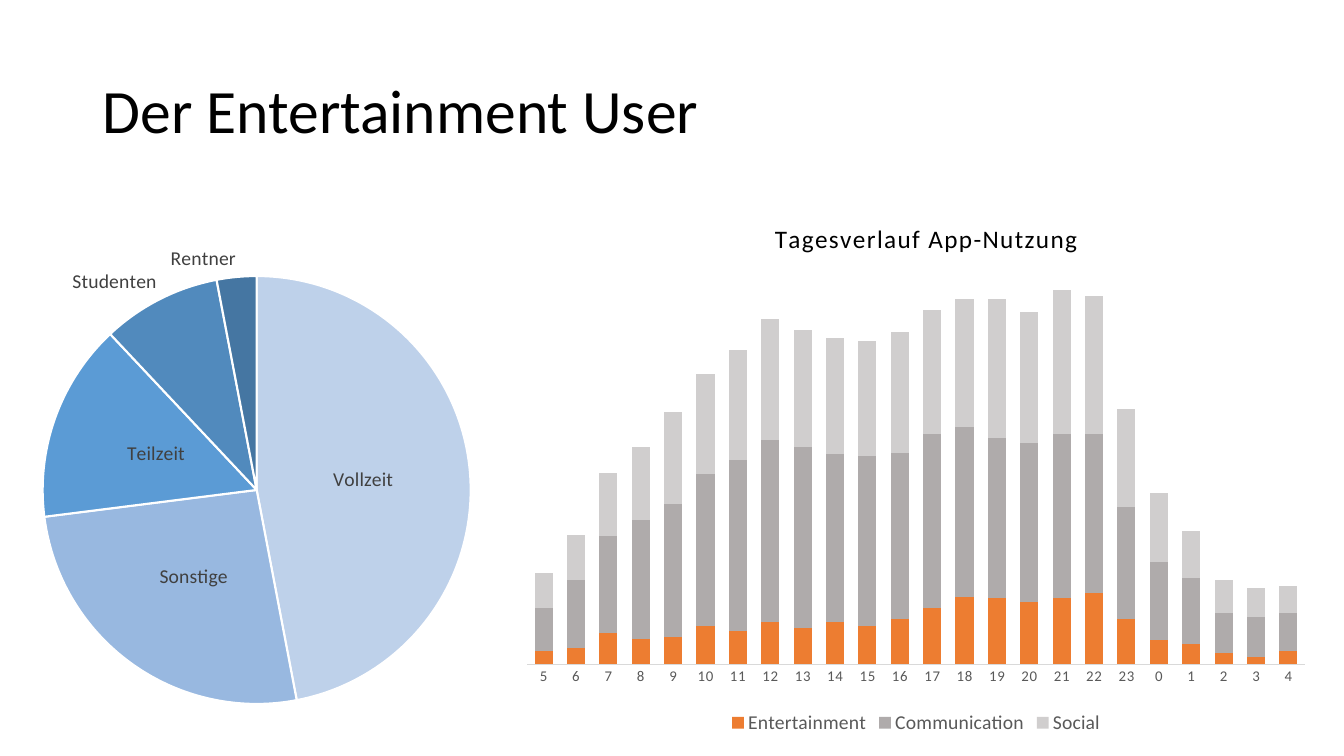
"""Build the slide on the entertainment user: job pie and daily app usage."""
import pptx
import pptx.chart.data
import pptx.dml.color
import pptx.enum.chart
import pptx.enum.text
import pptx.oxml
import pptx.oxml.ns
import pptx.util

THEME = {
    "font": "Calibri", "ink": "000000", "label": "404040", "axis": "595959",
    "line": "D9D9D9", "gap": "FFFFFF",
    "title": 44, "heading": 18, "text": 14, "tick": 10.6,
}
JOBS = [
    ("Vollzeit", 47, "BED1EA", "CENTER"),
    ("Sonstige", 26, "98B8E0", "CENTER"),
    ("Teilzeit", 15, "5B9BD5", "CENTER"),
    ("Studenten", 9, "518ABD", "OUTSIDE_END"),
    ("Rentner", 3, "4576A2", "OUTSIDE_END"),
]
USAGE = [
    ("Entertainment", "ED7D31", [7, 9, 17, 14, 15, 21, 18, 23, 20, 23, 21, 25,
                                 31, 37, 36, 34, 36, 39, 25, 13, 11, 6, 4, 7]),
    ("Communication", "AFABAB", [24, 37, 53, 65, 73, 83, 94, 100, 99, 92, 93, 91,
                                 95, 93, 88, 87, 90, 87, 61, 43, 36, 22, 22, 21]),
    ("Social", "D0CECE", [19, 25, 35, 40, 50, 55, 60, 66, 64, 64, 63, 66,
                          68, 70, 76, 72, 79, 76, 54, 38, 26, 18, 16, 15]),
]
HOURS = [str(hour % 24) for hour in range(5, 29)]


def style(font, size, color):
    """Give a font the theme's face, size and colour."""
    font.name = THEME["font"]
    font.size = pptx.util.Pt(THEME[size])
    font.bold = False
    font.color.rgb = pptx.dml.color.RGBColor.from_string(THEME[color])


def place(parent, index, **shares):
    """Place a chart part by shares of the chart's size."""
    for old in parent.xpath("./c:layout"):
        parent.remove(old)
    target = '<c:layoutTarget val="inner"/>' if "w" in shares else ""
    modes = "".join(f'<c:{key}Mode val="edge"/>' for key in "xy")
    values = "".join(f'<c:{key} val="{share}"/>' for key, share in shares.items())
    parent.insert(index, pptx.oxml.parse_xml(
        f'<c:layout {pptx.oxml.ns.nsdecls("c")}><c:manualLayout>'
        f"{target}{modes}{values}</c:manualLayout></c:layout>"))


deck = pptx.Presentation()
deck.slide_width = pptx.util.Inches(13.33)
deck.slide_height = pptx.util.Inches(7.5)
page = deck.slides.add_slide(deck.slide_layouts[6])
inch = pptx.util.Inches
rgb = pptx.dml.color.RGBColor.from_string
kinds = pptx.enum.chart.XL_CHART_TYPE

box = page.shapes.add_textbox(inch(0.92), inch(0.4), inch(11.5), inch(1.45))
box.text_frame.word_wrap = True
box.text_frame.vertical_anchor = pptx.enum.text.MSO_ANCHOR.MIDDLE
para = box.text_frame.paragraphs[0]
para.line_spacing = 0.9
span = para.add_run()
span.text = "Der Entertainment User"
style(span.font, "title", "ink")

job_data = pptx.chart.data.CategoryChartData()
job_data.categories = [job[0] for job in JOBS]
job_data.add_series("Series 1", [job[1] for job in JOBS])
pie = page.shapes.add_chart(
    kinds.PIE, inch(-0.82), inch(2.3), inch(6.8), inch(4.88), job_data).chart
pie.has_title = False
pie.has_legend = False
style(pie.font, "text", "ink")
place(pie.element.xpath(".//c:plotArea")[0], 0, x=0.18, y=0.09, w=0.63, h=0.87)
slices = pie.plots[0].series[0]
for number, (job, share, color, position) in enumerate(JOBS):
    point = slices.points[number]
    point.format.fill.solid()
    point.format.fill.fore_color.rgb = rgb(color)
    point.format.line.color.rgb = rgb(THEME["gap"])
    point.format.line.width = pptx.util.Pt(1.5)
    style(point.data_label.font, "text", "label")
    point.data_label.position = pptx.enum.chart.XL_LABEL_POSITION[position]
for flag, shown in (("showVal", "0"), ("showCatName", "1")):
    for element in pie.element.xpath(f".//c:dLbls//c:{flag}"):
        element.set("val", shown)

usage_data = pptx.chart.data.CategoryChartData()
usage_data.categories = HOURS
for name, color, values in USAGE:
    usage_data.add_series(name, values)
bars = page.shapes.add_chart(
    kinds.COLUMN_STACKED, inch(5.07), inch(1.64), inch(8.03), inch(5.69), usage_data).chart
style(bars.font, "tick", "ink")
place(bars.element.xpath(".//c:plotArea")[0], 0, x=0.02, y=0.17, w=0.96, h=0.7)
bars.plots[0].gap_width = 79
bars.plots[0].overlap = 100
for series, (name, color, values) in zip(bars.plots[0].series, USAGE):
    series.format.fill.solid()
    series.format.fill.fore_color.rgb = rgb(color)

bars.has_title = True
heading = bars.chart_title.text_frame.paragraphs[0].add_run()
heading.text = "Tagesverlauf App-Nutzung"
style(heading.font, "heading", "ink")
place(bars.element.xpath(".//c:title")[0], 1, x=0.32, y=0.09)

hours = bars.category_axis
hours.major_tick_mark = pptx.enum.chart.XL_TICK_MARK.NONE
hours.format.line.color.rgb = rgb(THEME["line"])
hours.format.line.width = pptx.util.Pt(0.75)
style(hours.tick_labels.font, "tick", "axis")
for spaced, spacing in ((".//c:title//a:rPr", "100"), (".//c:catAx//a:defRPr", "60")):
    for element in bars.element.xpath(spaced):
        element.set("spc", spacing)

bars.value_axis.minimum_scale = 0
bars.value_axis.maximum_scale = 220
bars.value_axis.has_major_gridlines = False
bars.value_axis.visible = False
bars.has_legend = True
bars.legend.position = pptx.enum.chart.XL_LEGEND_POSITION.BOTTOM
bars.legend.include_in_layout = False
style(bars.legend.font, "text", "axis")

deck.save("out.pptx")
